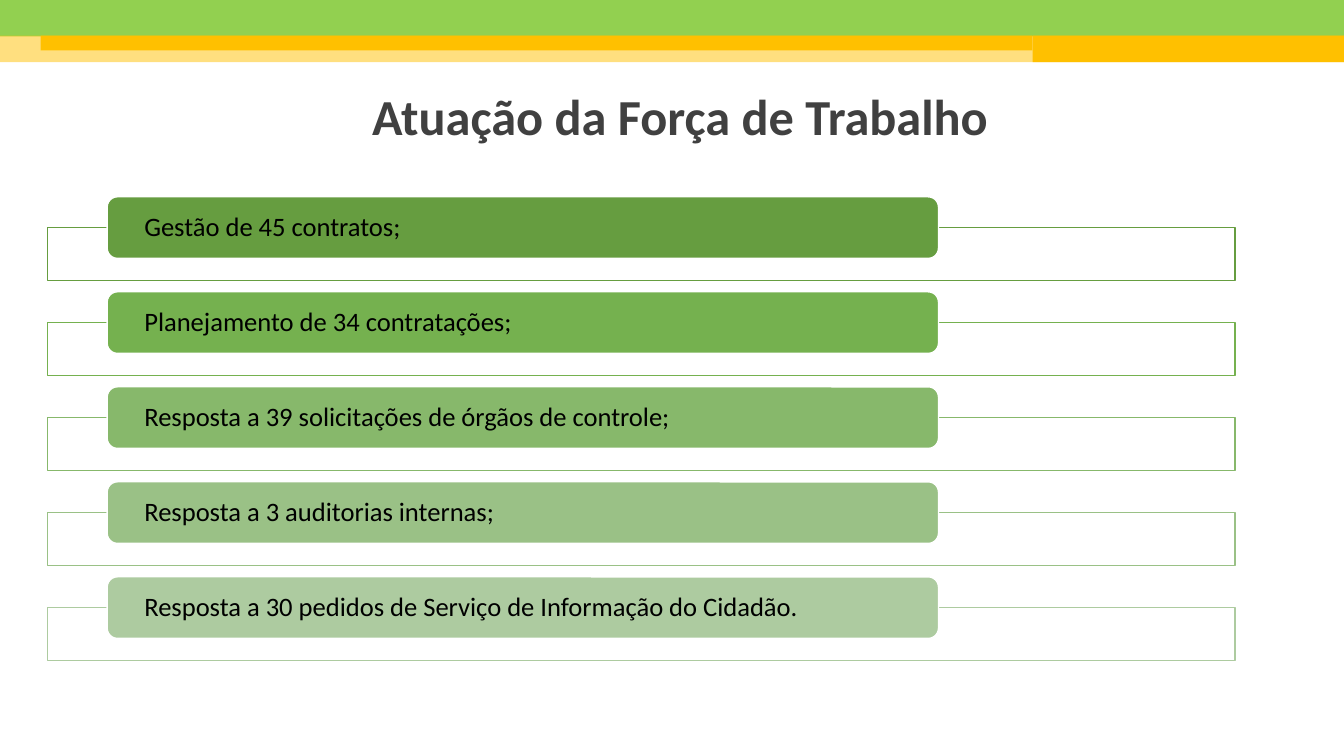
from lxml import etree
from pptx import Presentation
from pptx.dml.color import RGBColor
from pptx.enum.shapes import MSO_SHAPE as SHAPE
from pptx.enum.text import MSO_ANCHOR as ANCHOR, PP_ALIGN as ALIGN
from pptx.oxml.ns import qn
from pptx.util import Pt

TITLE = "Atuação da Força de Trabalho"
ITEMS = [
    ("Gestão de 45 contratos;", "669D40"),
    ("Planejamento de 34 contratações;", "75B14F"),
    ("Resposta a 39 solicitações de órgãos de controle;", "87B86B"),
    ("Resposta a 3 auditorias internas;", "9AC186"),
    ("Resposta a 30 pedidos de Serviço de Informação do Cidadão.", "ADCBA0"),
]
# left, top, width, height, colour, opacity in percent
BANDS = [
    (0, 0, 960, 26, "92D050", 100),
    (0, 25.5, 960, 19, "FFC000", 50),
    (29, 25.5, 708.5, 10.5, "FFC000", 100),
    (737.7, 25.5, 222.3, 19, "FFC000", 100),
]
FRAME_LEFT, FRAME_TOP, FRAME_W, FRAME_H = 33.8, 162.6, 848.4, 37.8
PILL_LEFT, PILL_TOP, PILL_W, PILL_H = 76.6, 140.6, 593.8, 44
PITCH = 67.86


def color(value):
    return RGBColor.from_string(value)


def add_box(kind, box, fill, line=None, opacity=100):
    sp = s.shapes.add_shape(kind, *map(Pt, box))
    sp.shadow.inherit = False
    sp.fill.solid()
    sp.fill.fore_color.rgb = color(fill)
    if opacity < 100:
        rgb = sp.fill._xPr.find(f"{qn('a:solidFill')}/{qn('a:srgbClr')}")
        etree.SubElement(rgb, qn("a:alpha"), val=str(opacity * 1000))
    if line:
        sp.line.color.rgb = color(line)
        sp.line.width = Pt(1)
    else:
        sp.line.fill.background()
    return sp


def write(sp, text, align, font, **frame):
    """Set the frame's format values and put one run of text in it."""
    tf = sp.text_frame
    for name, value in {"word_wrap": True, **frame}.items():
        setattr(tf, name, value)
    p = tf.paragraphs[0]
    p.alignment = align
    r = p.add_run()
    r.text = text
    r.font.color.rgb = color(font.pop("color"))
    for name, value in {"name": "Calibri", **font}.items():
        setattr(r.font, name, value)
    return p


prs = Presentation()
prs.slide_width, prs.slide_height = Pt(960), Pt(540)
s = prs.slides.add_slide(prs.slide_layouts[6])

for *box, fill, opacity in BANDS:
    add_box(SHAPE.RECTANGLE, box, fill, opacity=opacity)

for i, (text, shade) in enumerate(ITEMS):
    dy = i * PITCH
    add_box(SHAPE.RECTANGLE, (FRAME_LEFT, FRAME_TOP + dy, FRAME_W, FRAME_H),
            "FFFFFF", shade, 90)
    pill = add_box(SHAPE.ROUNDED_RECTANGLE,
                   (PILL_LEFT, PILL_TOP + dy, PILL_W, PILL_H), shade, "FFFFFF")
    p = write(pill, text, ALIGN.LEFT, {"size": Pt(19), "color": "000000"},
              vertical_anchor=ANCHOR.MIDDLE, margin_left=Pt(24.4),
              margin_right=Pt(24.4), margin_top=0, margin_bottom=0)
    p.line_spacing = 0.9

title = s.shapes.add_textbox(*map(Pt, (123.8, 56.9, 724.3, 51.1)))
write(title, TITLE, ALIGN.CENTER, {"size": Pt(36), "bold": True, "color": "404040"})

prs.save("out.pptx")
